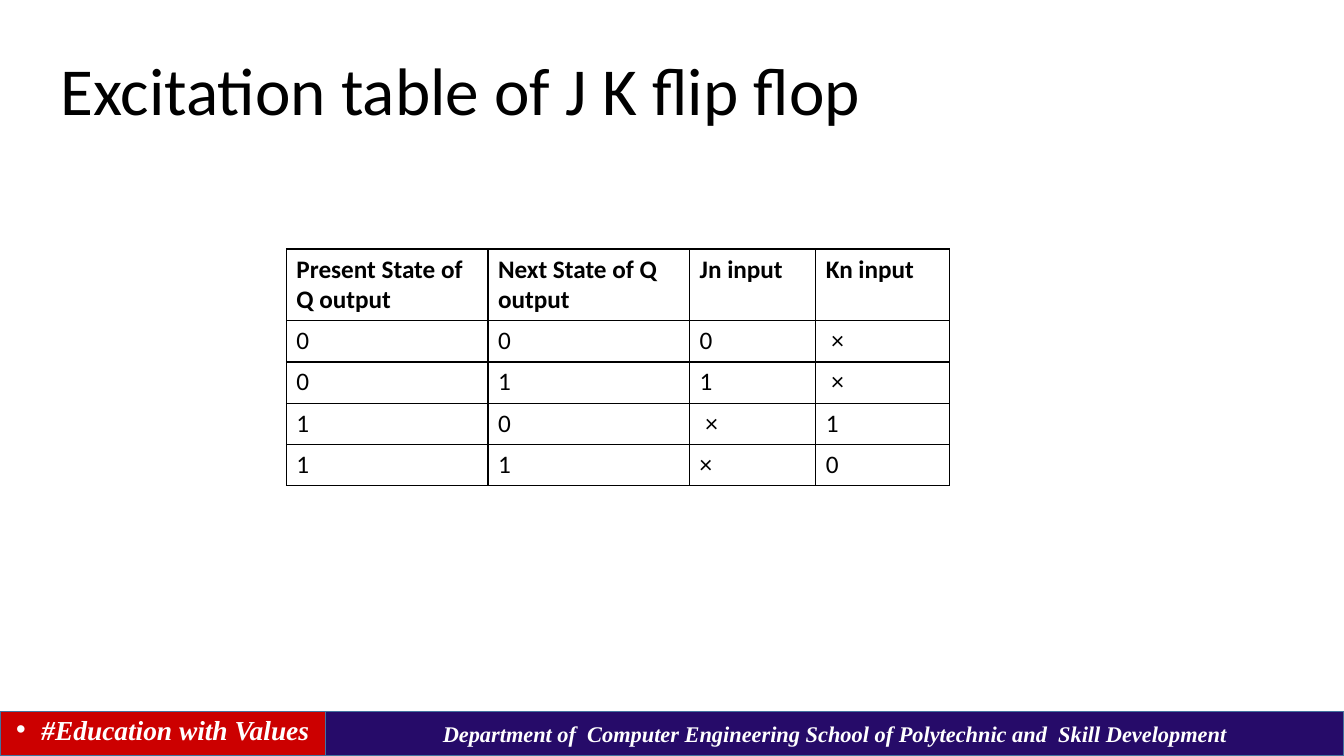
from lxml.etree import SubElement
from pptx import Presentation
from pptx.dml.color import RGBColor
from pptx.enum.shapes import MSO_SHAPE as Shape
from pptx.enum.text import MSO_ANCHOR as Anchor, MSO_AUTO_SIZE as AutoSize, PP_ALIGN as Align
from pptx.oxml.ns import qn
from pptx.util import Inches, Pt

COLORS = {
    "text": "000000",
    "white": "FFFFFF",
    "motto": "CC0000",
    "department": "260B69",
    "outline": "43739E",
}
FOOTER_TOP, FOOTER_HEIGHT = 7.06, 0.44
FOOTER_FONT = dict(font="Times New Roman", color="white", bold=True, italic=True, align=Align.CENTER)

COLUMN_WIDTHS = [2, 2, 1.25, 1.33]
HEADER_HEIGHT, ROW_HEIGHT = 0.71, 0.41
EXCITATION_ROWS = [
    ["Present State of Q output", "Next State of Q output", "Jn input", "Kn input"],
    ["0", "0", "0", " ×"],
    ["0", "1", "1", " ×"],
    ["1", "0", " ×", "1"],
    ["1", "1", "×", "0"],
]


def rgb(name):
    return RGBColor.from_string(COLORS[name])


def write_text(frame, text, size, font="Calibri", color="text", bold=False, italic=False,
               align=Align.LEFT, anchor=Anchor.MIDDLE, spacing=None, before=None):
    """Fill a text frame with one formatted paragraph and return it."""
    frame.word_wrap = True
    frame.vertical_anchor = anchor
    paragraph = frame.paragraphs[0]
    paragraph.alignment = align
    if spacing is not None:
        paragraph.line_spacing = spacing
    if before is not None:
        paragraph.space_before = Pt(before)
    run = paragraph.add_run()
    run.text = text
    run.font.name = font
    run.font.size = Pt(size)
    run.font.bold = bold
    run.font.italic = italic
    run.font.color.rgb = rgb(color)
    return paragraph


def add_bullet(paragraph, indent):
    properties = paragraph._p.get_or_add_pPr()
    properties.set("marL", str(Inches(indent)))
    properties.set("indent", str(-Inches(indent)))
    SubElement(properties, qn("a:buFont"), typeface="Arial")
    SubElement(properties, qn("a:buChar"), char="•")


def add_footer_band(slide, left, width, fill):
    band = slide.shapes.add_shape(Shape.RECTANGLE, Inches(left), Inches(FOOTER_TOP),
                                  Inches(width), Inches(FOOTER_HEIGHT))
    band.shadow.inherit = False
    band.fill.solid()
    band.fill.fore_color.rgb = rgb(fill)
    band.line.color.rgb = rgb("outline")
    band.line.width = Pt(1)
    return band.text_frame


def place_title(slide, text):
    title = slide.shapes.title
    title.left, title.top = Inches(0.5), Inches(0.3)
    title.width, title.height = Inches(9), Inches(1.25)
    write_text(title.text_frame, text, 48, spacing=0.9)
    title.text_frame.auto_size = AutoSize.NONE


def add_cell_borders(cell):
    properties = cell._tc.get_or_add_tcPr()
    for position, side in enumerate(("a:lnL", "a:lnR", "a:lnT", "a:lnB")):
        border = properties.makeelement(qn(side), {"w": str(Pt(1))})
        properties.insert(position, border)
        fill = SubElement(border, qn("a:solidFill"))
        SubElement(fill, qn("a:srgbClr"), val=COLORS["text"])


def add_excitation_table(slide, left, top):
    height = HEADER_HEIGHT + ROW_HEIGHT * (len(EXCITATION_ROWS) - 1)
    table = slide.shapes.add_table(len(EXCITATION_ROWS), len(COLUMN_WIDTHS), Inches(left), Inches(top),
                                   Inches(sum(COLUMN_WIDTHS)), Inches(height)).table
    table.first_row = True
    table.horz_banding = False
    for column, width in zip(table.columns, COLUMN_WIDTHS):
        column.width = Inches(width)
    for index, values in enumerate(EXCITATION_ROWS):
        is_header = index == 0
        table.rows[index].height = Inches(HEADER_HEIGHT if is_header else ROW_HEIGHT)
        for cell, value in zip(table.rows[index].cells, values):
            cell.fill.background()
            add_cell_borders(cell)
            write_text(cell.text_frame, value, 18, bold=is_header, anchor=None)


def main():
    deck = Presentation()
    deck.slide_width, deck.slide_height = Inches(13.33), Inches(7.5)
    slide = deck.slides.add_slide(deck.slide_layouts[5])

    # Footer bands
    motto = add_footer_band(slide, 0, 3.23, "motto")
    motto_line = write_text(motto, "#Education with Values", 19.6, spacing=0.7, before=10, **FOOTER_FONT)
    add_bullet(motto_line, 0.25)
    department = add_footer_band(slide, 3.23, 10.1, "department")
    write_text(department, "Department of  Computer Engineering School of Polytechnic and  Skill Development",
               16, **FOOTER_FONT)

    # Title and table
    place_title(slide, "Excitation table of J K flip flop")
    add_excitation_table(slide, 2.84, 2.47)

    deck.save("out.pptx")


if __name__ == "__main__":
    main()
